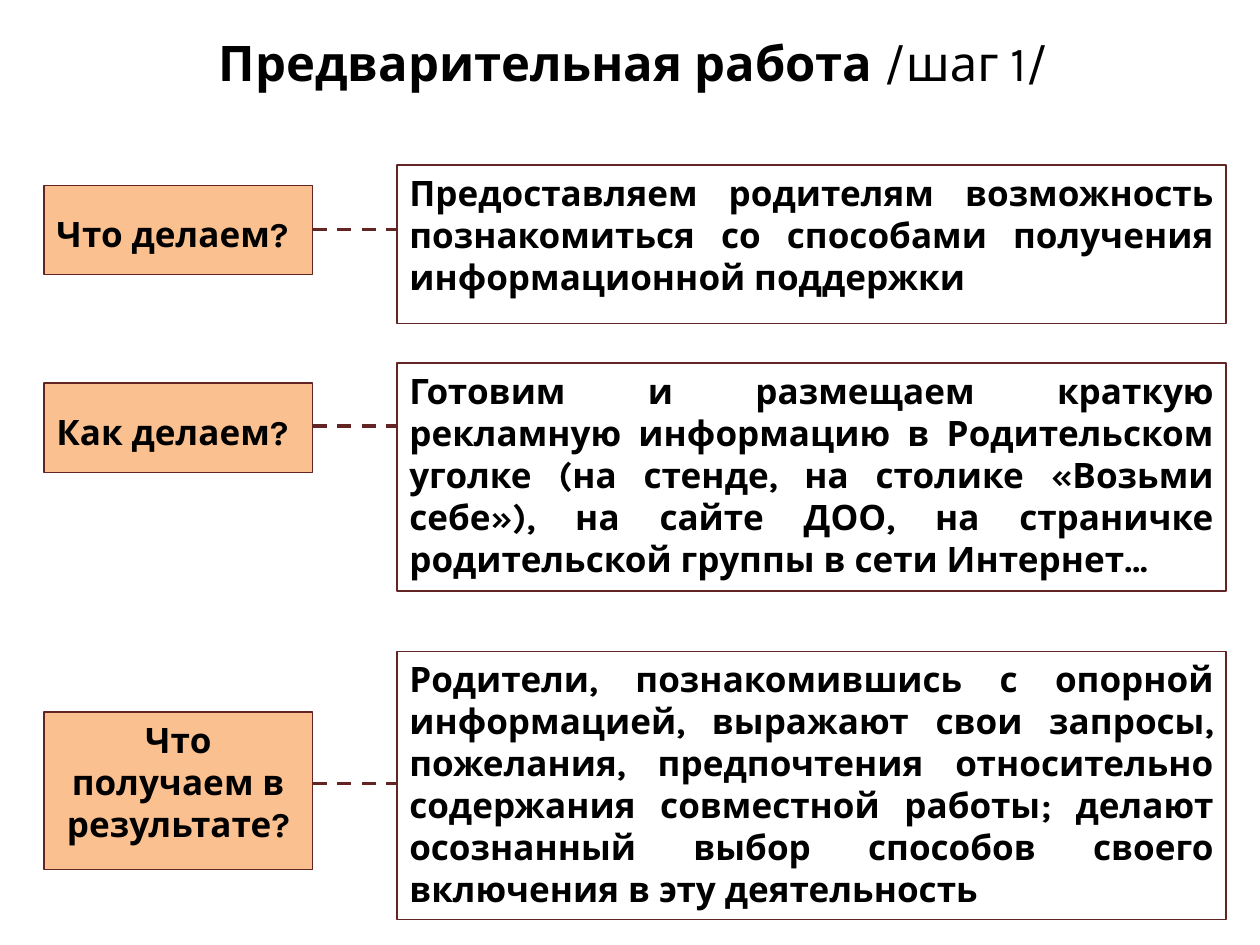
from pptx import Presentation
from pptx.dml.color import RGBColor
from pptx.enum.dml import MSO_LINE
from pptx.enum.shapes import MSO_CONNECTOR, MSO_SHAPE
from pptx.enum.text import MSO_ANCHOR, MSO_AUTO_SIZE, PP_ALIGN
from pptx.oxml.ns import qn
from pptx.util import Inches, Pt
from lxml import etree

BLACK = RGBColor(0x00, 0x00, 0x00)
MAROON = RGBColor(0x63, 0x25, 0x23)
PEACH = RGBColor(0xFA, 0xC0, 0x90)
FONT = "Karla"

LABEL_X, LABEL_W = 0.35, 2.13
ANSWER_X, ANSWER_W = 3.15, 6.58

# label, its top, height and format; answer, its top and height; link height
ONE_LINE = dict(align=PP_ALIGN.JUSTIFY, line_spacing=1.5, before=12, after=12)
CENTRED = dict(align=PP_ALIGN.CENTER, before=12, after=12)
STEPS = [
    ("Что делаем?", 1.47, 0.71, ONE_LINE,
     "Предоставляем родителям возможность познакомиться со способами "
     "получения информационной поддержки", 1.31, 1.26, 1.82),
    ("Как делаем?", 3.04, 0.71, ONE_LINE,
     "Готовим и размещаем краткую рекламную информацию в Родительском уголке "
     "(на стенде, на столике «Возьми себе»), на сайте ДОО, на страничке "
     "родительской группы в сети Интернет…", 2.88, 1.81, 3.38),
    ("Что получаем в результате?", 5.65, 1.25, CENTRED,
     "Родители, познакомившись с опорной информацией, выражают свои запросы, "
     "пожелания, предпочтения относительно содержания совместной работы; "
     "делают осознанный выбор способов своего включения в эту деятельность",
     5.17, 2.13, 6.22),
]


def write(sp, *runs, size=20, align=PP_ALIGN.JUSTIFY, line_spacing=None,
          before=4, after=0):
    """Fill a shape with one paragraph of (text, bold) runs."""
    tf = sp.text_frame
    tf.word_wrap = True
    tf.auto_size = MSO_AUTO_SIZE.NONE
    tf.vertical_anchor = MSO_ANCHOR.TOP
    p = tf.paragraphs[0]
    p.alignment = align
    p.line_spacing = line_spacing
    p.space_before, p.space_after = Pt(before), Pt(after)
    for text, bold in runs:
        r = p.add_run()
        r.text = text
        r.font.name, r.font.size, r.font.bold = FONT, Pt(size), bold
        r.font.color.rgb = BLACK


def add_title(slide, x, y, w, h):
    sp = slide.shapes.title
    sp.left, sp.top, sp.width, sp.height = map(Inches, (x, y, w, h))
    write(sp, ("Предварительная работа ", True), ("/шаг 1/", False),
          size=28, align=PP_ALIGN.CENTER, before=5.6)


def add_box(slide, x, y, w, h, text, fill=None, **fmt):
    sp = slide.shapes.add_shape(MSO_SHAPE.RECTANGLE, *map(Inches, (x, y, w, h)))
    sp.shadow.inherit = False
    if fill is None:
        sp.fill.background()
    else:
        sp.fill.solid()
        sp.fill.fore_color.rgb = fill
    sp.line.color.rgb, sp.line.width = MAROON, Pt(0.75)
    write(sp, (text, True), **fmt)


def add_link(slide, x1, x2, y):
    line = slide.shapes.add_connector(
        MSO_CONNECTOR.STRAIGHT, *map(Inches, (x1, y, x2, y)))
    line.line.color.rgb, line.line.width = MAROON, Pt(2)
    line.line.dash_style = MSO_LINE.DASH
    etree.SubElement(line._element.spPr, qn("a:effectLst"))


def add_step(slide, label, label_y, label_h, fmt,
             answer, answer_y, answer_h, link_y):
    add_box(slide, ANSWER_X, answer_y, ANSWER_W, answer_h, answer)
    add_box(slide, LABEL_X, label_y, LABEL_W, label_h, label, fill=PEACH, **fmt)
    add_link(slide, LABEL_X + LABEL_W, ANSWER_X, link_y)


def main():
    prs = Presentation()
    prs.slide_width, prs.slide_height = Inches(10), Inches(7.5)
    slide = prs.slides.add_slide(prs.slide_layouts[5])
    add_title(slide, 0.28, 0.21, 9.49, 0.87)
    for step in STEPS:
        add_step(slide, *step)
    prs.save("out.pptx")


if __name__ == "__main__":
    main()
